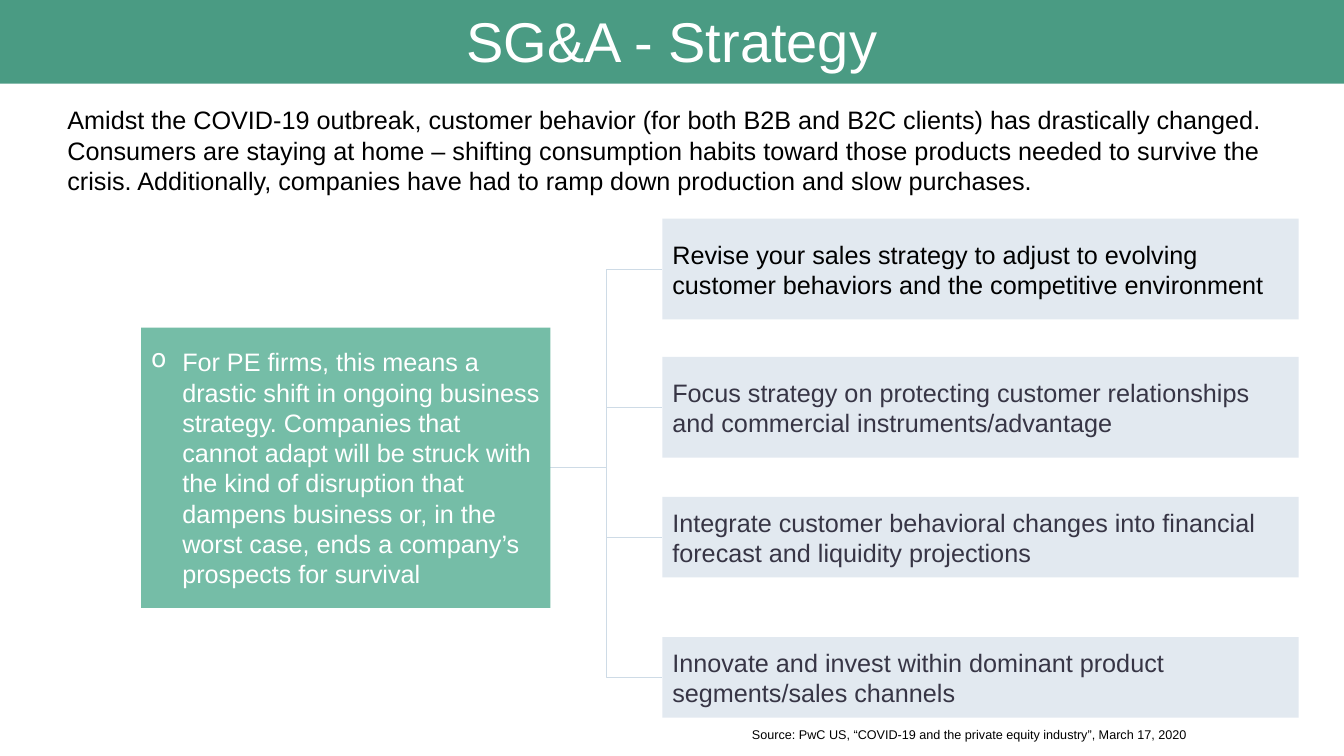
from dataclasses import dataclass

from lxml.etree import SubElement
from pptx import Presentation
from pptx.dml.color import RGBColor
from pptx.enum.shapes import MSO_CONNECTOR, MSO_SHAPE
from pptx.enum.text import MSO_ANCHOR, MSO_AUTO_SIZE, PP_ALIGN
from pptx.oxml.ns import qn
from pptx.util import Inches, Pt

WHITE, BLACK, SLATE = "FFFFFF", "000000", "373545"
GREEN, MINT, PALE, LINE = "4A9B83", "75BDA7", "E2E9F0", "CEDBE6"


@dataclass
class Box:
    text: str
    left: float
    top: float
    width: float
    height: float
    color: str = BLACK
    size: int = 18
    fill: str = ""

    @property
    def mid(self) -> float:
        return self.top + self.height / 2


@dataclass
class Step:
    text: str
    top: float
    height: float
    color: str = SLATE


TITLE = Box("SG&A - Strategy", 0, 0, 13.33, 0.83, WHITE, 40, GREEN)
INTRO = Box(
    "Amidst the COVID-19 outbreak, customer behavior (for both B2B and B2C clients) "
    "has drastically changed. Consumers are staying at home – shifting consumption "
    "habits toward those products needed to survive the crisis. Additionally, "
    "companies have had to ramp down production and slow purchases.",
    0.57, 0.99, 12.48, 1.01)
SHIFT = Box(
    "For PE firms, this means a drastic shift in ongoing business strategy. Companies "
    "that cannot adapt will be struck with the kind of disruption that dampens "
    "business or, in the worst case, ends a company’s prospects for survival",
    1.4, 3.25, 4.06, 2.78, WHITE, fill=MINT)
SOURCE = Box("Source: PwC US, “COVID-19 and the private equity industry”, March 17, 2020",
             7.36, 7.16, 5.51, 0.25, size=9)
STEPS = [
    Step("Revise your sales strategy to adjust to evolving customer behaviors "
         "and the competitive environment", 2.17, 1, BLACK),
    Step("Focus strategy on protecting customer relationships "
         "and commercial instruments/advantage", 3.54, 1),
    Step("Integrate customer behavioral changes into financial forecast "
         "and liquidity projections", 4.93, 0.8),
    Step("Innovate and invest within dominant product segments/sales channels", 6.32, 0.8),
]


def rgb(code: str) -> RGBColor:
    return RGBColor.from_string(code)


def draw(shapes, box: Box, align=PP_ALIGN.LEFT, bullet: str = ""):
    """Add a filled rectangle, or a text box when the box has no fill."""
    place = [Inches(n) for n in (box.left, box.top, box.width, box.height)]
    if box.fill:
        shape = shapes.add_shape(MSO_SHAPE.RECTANGLE, *place)
        shape.shadow.inherit = False
        shape.fill.solid()
        shape.fill.fore_color.rgb = rgb(box.fill)
        shape.line.fill.background()
    else:
        shape = shapes.add_textbox(*place)
    frame = shape.text_frame
    frame.word_wrap = True
    if box.fill:
        frame.vertical_anchor = MSO_ANCHOR.MIDDLE
        frame.margin_top = frame.margin_bottom = Inches(0.1)
    else:
        frame.auto_size = MSO_AUTO_SIZE.SHAPE_TO_FIT_TEXT
    para = frame.paragraphs[0]
    para.text = box.text
    para.alignment = align
    if bullet:
        props = para._p.get_or_add_pPr()
        props.set("marL", str(Inches(0.31)))
        props.set("indent", str(-Inches(0.31)))
        SubElement(props, qn("a:buChar")).set("char", bullet)
    font = para.font
    font.name, font.size = "Arial", Pt(box.size)
    font.color.rgb = rgb(box.color)
    return shape


def join(shapes, start: Box, end: Box) -> None:
    link = shapes.add_connector(
        MSO_CONNECTOR.ELBOW, Inches(start.left + start.width), Inches(start.mid),
        Inches(end.left), Inches(end.mid))
    link.line.color.rgb = rgb(LINE)
    link.line.width = Pt(0.75)
    SubElement(link._element.spPr, qn("a:effectLst"))


def main() -> None:
    deck = Presentation()
    deck.slide_width, deck.slide_height = Inches(13.33), Inches(7.5)
    shapes = deck.slides.add_slide(deck.slide_layouts[6]).shapes

    frame = draw(shapes, TITLE, PP_ALIGN.CENTER).text_frame
    frame.margin_top, frame.margin_bottom = Inches(0.05), 0
    frame.paragraphs[0].line_spacing = 0.9
    draw(shapes, INTRO)

    goals = [Box(s.text, 6.57, s.top, 6.31, s.height, s.color, fill=PALE) for s in STEPS]
    for goal in goals:
        join(shapes, SHIFT, goal)
    draw(shapes, SHIFT, bullet="o")
    for goal in goals:
        draw(shapes, goal)
    draw(shapes, SOURCE)
    deck.save("out.pptx")


if __name__ == "__main__":
    main()
